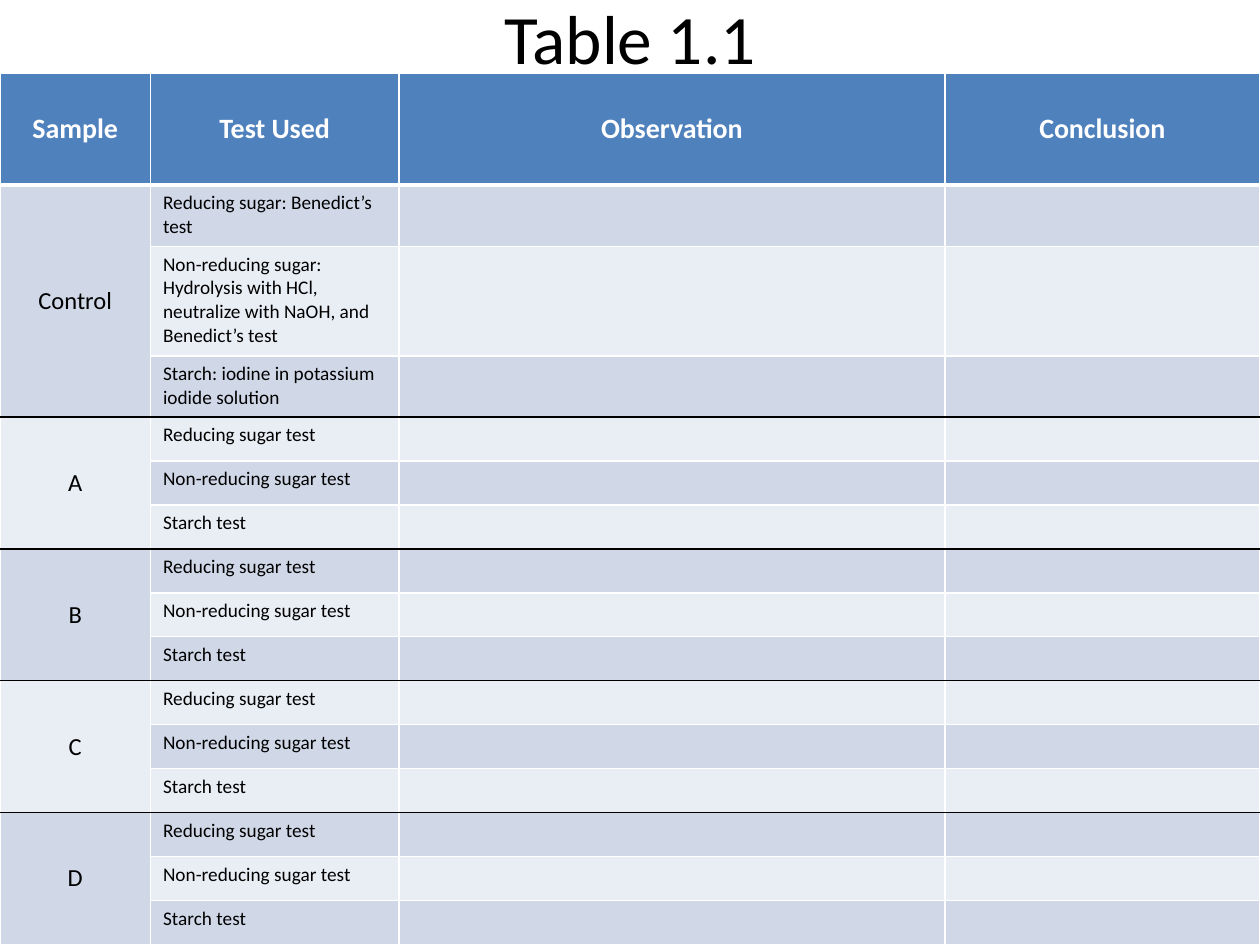
from lxml import etree
from pptx import Presentation
from pptx.dml.color import RGBColor
from pptx.enum.text import MSO_ANCHOR, PP_ALIGN
from pptx.oxml.ns import qn
from pptx.util import Pt

CENTER, LEFT = PP_ALIGN.CENTER, PP_ALIGN.LEFT
MIDDLE, TOP = MSO_ANCHOR.MIDDLE, MSO_ANCHOR.TOP

TITLE = "Table 1.1"
HEADINGS = ["Sample", "Test Used", "Observation", "Conclusion"]
CONTROL_TESTS = [
    "Reducing sugar: Benedict’s test",
    "Non-reducing sugar: Hydrolysis with HCl, neutralize with NaOH, and Benedict’s test",
    "Starch: iodine in potassium iodide solution",
]
SAMPLE_TESTS = ["Reducing sugar test", "Non-reducing sugar test", "Starch test"]
SAMPLES = [("Control", CONTROL_TESTS)] + [(name, SAMPLE_TESTS) for name in "ABCD"]

SLIDE_WIDTH, SLIDE_HEIGHT = 720, 540
TITLE_HEIGHT = 41.76
COLUMN_WIDTHS = [86, 142, 312, 180]
TOP_ROW_HEIGHTS = [64, 35, 62.6, 35]
GROUP_SIZE = 3
ROW_COUNT = 1 + GROUP_SIZE * len(SAMPLES)
TABLE_HEIGHT = SLIDE_HEIGHT - TITLE_HEIGHT
plain_rows = ROW_COUNT - len(TOP_ROW_HEIGHTS)
plain_height = (TABLE_HEIGHT - sum(TOP_ROW_HEIGHTS)) / plain_rows
ROW_HEIGHTS = TOP_ROW_HEIGHTS + [plain_height] * plain_rows

FONT = "Calibri"
BLACK, WHITE, HEADER_BLUE = "000000", "FFFFFF", "4F81BD"
BANDS = ["E9EDF4", "D0D8E8"]


def color(value):
    return RGBColor.from_string(value)


def write(paragraph, text, size, ink, align, bold=False):
    paragraph.text = text
    paragraph.alignment = align
    font = paragraph.font
    font.name, font.size, font.bold = FONT, Pt(size), bold
    font.color.rgb = color(ink)


def fill_cell(cell, text, size, background, ink=BLACK, align=LEFT, anchor=TOP, bold=False):
    cell.fill.solid()
    cell.fill.fore_color.rgb = color(background)
    cell.vertical_anchor = anchor
    paragraph = cell.text_frame.paragraphs[0]
    write(paragraph, text, size, ink, align, bold)
    if not text:
        etree.SubElement(paragraph._p, qn("a:endParaRPr"), sz=str(size * 100))


def set_borders(cell, top, bottom):
    properties = cell._tc.get_or_add_tcPr()
    sides = [("L", (WHITE, 1)), ("R", (WHITE, 1)), ("T", top), ("B", bottom)]
    for position, (side, (ink, width)) in enumerate(sides):
        line = etree.Element(qn(f"a:ln{side}"), w=str(Pt(width)))
        solid = etree.SubElement(line, qn("a:solidFill"))
        etree.SubElement(solid, qn("a:srgbClr"), val=ink)
        properties.insert(position, line)


def rule_below(row):
    if row == 0:
        return WHITE, 3
    if row > 0 and row % GROUP_SIZE == 0 and row < ROW_COUNT - 1:
        return BLACK, 1
    return WHITE, 1


presentation = Presentation()
presentation.slide_width, presentation.slide_height = Pt(SLIDE_WIDTH), Pt(SLIDE_HEIGHT)
slide = presentation.slides.add_slide(presentation.slide_layouts[5])

title = slide.shapes.title
title.left, title.top, title.width, title.height = Pt(36), Pt(0), Pt(648), Pt(TITLE_HEIGHT)
title.text_frame.vertical_anchor = MIDDLE
write(title.text_frame.paragraphs[0], TITLE, 39.6, BLACK, CENTER)

table = slide.shapes.add_table(
    ROW_COUNT, len(HEADINGS), Pt(0), Pt(TITLE_HEIGHT), Pt(SLIDE_WIDTH), Pt(TABLE_HEIGHT)
).table
for column, width in zip(table.columns, COLUMN_WIDTHS):
    column.width = Pt(width)
for row, height in zip(table.rows, ROW_HEIGHTS):
    row.height = Pt(height)

for column, heading in enumerate(HEADINGS):
    fill_cell(table.cell(0, column), heading, 16, HEADER_BLUE, WHITE, CENTER, MIDDLE, True)

for group, (sample, tests) in enumerate(SAMPLES):
    first = 1 + group * GROUP_SIZE
    for row, test in enumerate(tests, first):
        for column, text in enumerate(["", test, "", ""]):
            fill_cell(table.cell(row, column), text, 11, BANDS[row % 2])
    sample_cell = table.cell(first, 0)
    sample_cell.merge(table.cell(first + GROUP_SIZE - 1, 0))
    fill_cell(sample_cell, sample, 14, BANDS[first % 2], BLACK, CENTER, MIDDLE)

for row in range(ROW_COUNT):
    for column in range(len(HEADINGS)):
        cell = table.cell(row, column)
        last = row + cell.span_height - 1 if cell.is_merge_origin else row
        set_borders(cell, rule_below(row - 1), rule_below(last))

presentation.save("out.pptx")
